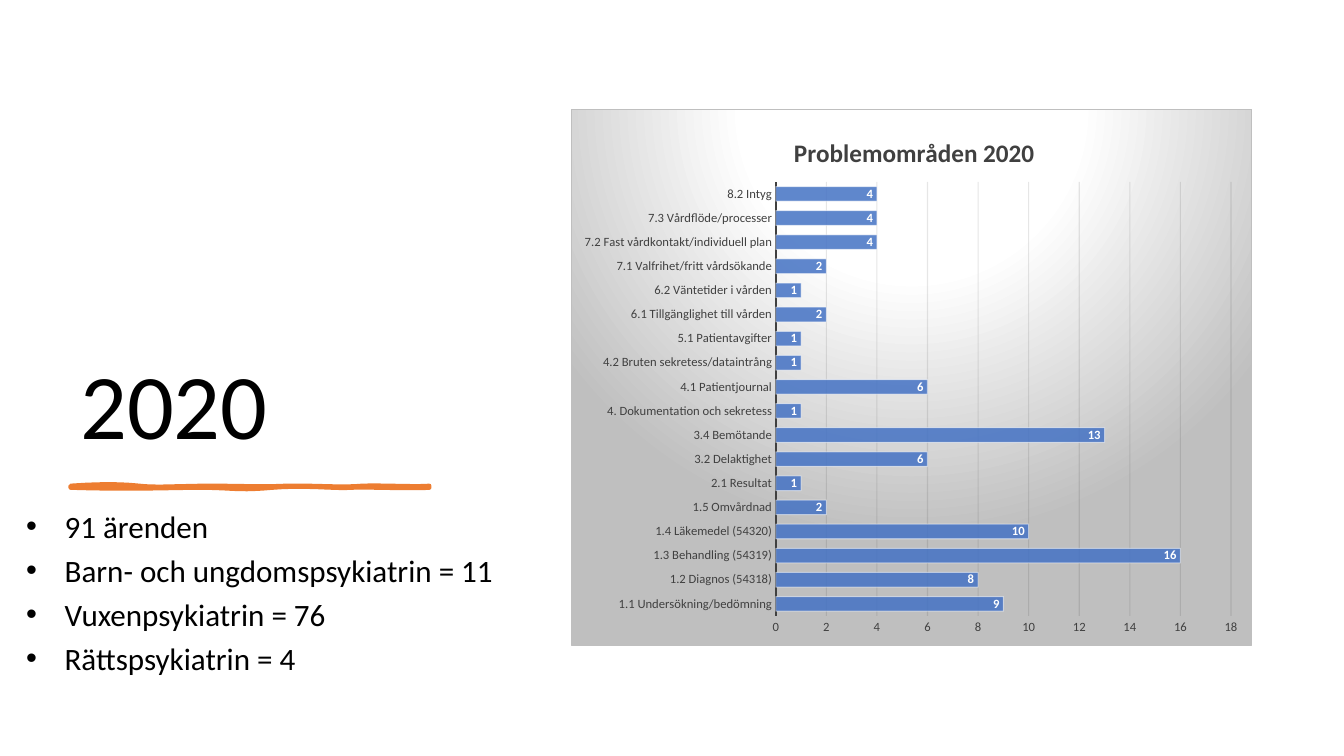
"""Build a slide with the 2020 case counts and a bar chart of problem areas."""
from lxml import etree
from pptx import Presentation
from pptx.chart.data import CategoryChartData
from pptx.dml.color import RGBColor
from pptx.enum.chart import XL_CHART_TYPE, XL_LABEL_POSITION, XL_TICK_MARK
from pptx.enum.text import MSO_ANCHOR
from pptx.oxml import parse_xml
from pptx.oxml.ns import nsdecls, qn
from pptx.util import Cm, Pt

BAR = XL_CHART_TYPE.BAR_CLUSTERED
INSIDE_END = XL_LABEL_POSITION.INSIDE_END
NO_TICK = XL_TICK_MARK.NONE
TOP, BOTTOM = MSO_ANCHOR.TOP, MSO_ANCHOR.BOTTOM

HEADING = "2020"
FACTS = ["91 ärenden", "Barn- och ungdomspsykiatrin = 11",
         "Vuxenpsykiatrin = 76", "Rättspsykiatrin = 4"]
CHART_TITLE = "Problemområden 2020"
PROBLEMS = [
    ("1.1 Undersökning/bedömning", 9),
    ("1.2 Diagnos (54318)", 8),
    ("1.3 Behandling (54319)", 16),
    ("1.4 Läkemedel (54320)", 10),
    ("1.5 Omvårdnad", 2),
    ("2.1 Resultat", 1),
    ("3.2 Delaktighet", 6),
    ("3.4 Bemötande", 13),
    ("4. Dokumentation och sekretess", 1),
    ("4.1 Patientjournal", 6),
    ("4.2 Bruten sekretess/dataintrång", 1),
    ("5.1 Patientavgifter", 1),
    ("6.1 Tillgänglighet till vården", 2),
    ("6.2 Väntetider i vården", 1),
    ("7.1 Valfrihet/fritt vårdsökande", 2),
    ("7.2 Fast vårdkontakt/individuell plan", 4),
    ("7.3 Vårdflöde/processer", 4),
    ("8.2 Intyg", 4),
]
BRUSH_START = (1.78, 12.24)
BRUSH_CURVES = [
    ((2.46, 12.19), (3.07, 12.19), (3.51, 12.24)),
    ((3.94, 12.29), (4.5, 12.24), (5.31, 12.24)),
    ((6.12, 12.24), (6.6, 12.27), (7.21, 12.24)),
    ((7.82, 12.22), (8.61, 12.29), (9.12, 12.24)),
    ((9.63, 12.22), (10.46, 12.27), (10.82, 12.24)),
    ((10.82, 12.27), (10.82, 12.29), (10.82, 12.29)),
    ((10.36, 12.32), (9.25, 12.27), (8.84, 12.29)),
    ((8.43, 12.32), (7.72, 12.22), (6.86, 12.29)),
    ((5.97, 12.37), (5.87, 12.29), (5.05, 12.29)),
    ((4.22, 12.29), (3.35, 12.34), (1.78, 12.29)),
]
THEME = {
    "font": "Calibri", "text": "000000", "muted": "404040", "accent": "ED7D31",
    "bar": "4472C4", "light": "FFFFFF", "grey": "BFBFBF", "grid": "0D0D0D",
    "heading": 66, "body": 22.2, "title": 18, "label": 9, "base": 10,
}


def rgb(name):
    return RGBColor.from_string(THEME[name])


def style(font, size, color, bold=False):
    font.name, font.size, font.bold = THEME["font"], Pt(THEME[size]), bold
    font.color.rgb = rgb(color)


def add_text(s, box, lines, size, anchor=TOP, spacing=0.9, before=0, indent=0):
    tf = s.shapes.add_textbox(*map(Cm, box)).text_frame
    tf.word_wrap, tf.vertical_anchor = True, anchor
    for i, line in enumerate(lines):
        p = tf.paragraphs[0] if i == 0 else tf.add_paragraph()
        p.line_spacing, p.space_before = spacing, Pt(before)
        r = p.add_run()
        r.text = line
        style(r.font, size, "text")
        if indent:
            pPr = p._p.get_or_add_pPr()
            pPr.set("marL", str(Cm(indent)))
            pPr.set("indent", str(-Cm(indent)))
            etree.SubElement(pPr, qn("a:buFont")).set("typeface", "Arial")
            etree.SubElement(pPr, qn("a:buChar")).set("char", "•")


def curve_points(start, curves, steps=10):
    points = []
    for c1, c2, end in curves:
        for t in (i / steps for i in range(1, steps + 1)):
            u = 1 - t
            points.append(tuple(
                Cm(u**3 * a + 3 * u * u * t * b + 3 * u * t * t * c + t**3 * d)
                for a, b, c, d in zip(start, c1, c2, end)))
        start = end
    return points


def add_brush(s):
    builder = s.shapes.build_freeform(*map(Cm, BRUSH_START))
    builder.add_line_segments(curve_points(BRUSH_START, BRUSH_CURVES), close=True)
    sp = builder.convert_to_shape()
    sp.shadow.inherit = False
    sp.fill.solid()
    sp.fill.fore_color.rgb = rgb("accent")
    sp.line.color.rgb = rgb("accent")
    sp.line.width = Pt(3)


def set_line(line, color, width, alpha=100):
    line.color.rgb, line.width = rgb(color), Pt(width)
    set_alpha(line.fill, alpha)


def set_alpha(fill, percent):
    clr = fill._xPr.find(qn("a:solidFill"))[0]
    etree.SubElement(clr, qn("a:alpha")).set("val", str(percent * 1000))


def set_layout(parent, after, inner=False, **place):
    target = '<c:layoutTarget val="inner"/>' if inner else ""
    modes = "".join(f'<c:{k}Mode val="edge"/>' for k in "xy")
    values = "".join(f'<c:{k} val="{v}"/>' for k, v in place.items())
    for old in parent.findall(qn("c:layout")):
        parent.remove(old)
    layout = parse_xml(f'<c:layout {nsdecls("c")}><c:manualLayout>{target}{modes}'
                       f'{values}</c:manualLayout></c:layout>')
    if after is None:
        parent.insert(0, layout)
    else:
        after.addnext(layout)


def set_background(chart):
    stops = "".join(f'<a:gs pos="{pos * 1000}"><a:srgbClr val="{THEME[c]}"/></a:gs>'
                    for pos, c in ((0, "light"), (39, "light"), (100, "grey")))
    spPr = parse_xml(
        f'<c:spPr {nsdecls("c", "a")}><a:gradFill><a:gsLst>{stops}</a:gsLst>'
        '<a:path path="circle"><a:fillToRect l="50000" t="-80000" r="50000" '
        'b="180000"/></a:path></a:gradFill><a:ln w="9525"><a:solidFill>'
        f'<a:srgbClr val="{THEME["grey"]}"/></a:solidFill></a:ln></c:spPr>')
    chart._chartSpace.find(qn("c:chart")).addnext(spPr)


def add_problem_chart(s):
    data = CategoryChartData()
    data.categories = [name for name, _ in PROBLEMS]
    data.add_series("Series 1", [count for _, count in PROBLEMS])
    box = map(Cm, (14.4, 2.75, 17.15, 13.53))
    chart = s.shapes.add_chart(BAR, *box, data).chart
    style(chart.font, "base", "text")
    chart.has_legend = False
    set_background(chart)

    chart.has_title = True
    tf = chart.chart_title.text_frame
    tf.text = CHART_TITLE
    style(tf.paragraphs[0].runs[0].font, "title", "muted", bold=True)
    title = chart.chart_title._element
    set_layout(title, title.find(qn("c:tx")), x=0.32, y=0.04)
    set_layout(chart._chartSpace.chart.plotArea, None, inner=True,
               x=0.3, y=0.135, w=0.67, h=0.81)

    for axis in (chart.category_axis, chart.value_axis):
        axis.major_tick_mark = axis.minor_tick_mark = NO_TICK
        style(axis.tick_labels.font, "label", "muted")
    set_line(chart.category_axis.format.line, "muted", 1.5)
    value_axis = chart.value_axis
    value_axis.format.line.fill.background()
    value_axis.minimum_scale, value_axis.maximum_scale = 0, 18
    value_axis.major_unit = 2
    set_line(value_axis.major_gridlines.format.line, "grid", 0.75, alpha=10)

    plot = chart.plots[0]
    plot.gap_width, plot.vary_by_categories = 65, False
    series = plot.series[0]
    series.format.fill.solid()
    series.format.fill.fore_color.rgb = rgb("bar")
    set_alpha(series.format.fill, 85)
    set_line(series.format.line, "light", 0.75, alpha=50)
    labels = series.data_labels
    labels.show_value, labels.position = True, INSIDE_END
    style(labels.font, "label", "light", bold=True)


def main():
    prs = Presentation()
    prs.slide_width, prs.slide_height = Cm(33.87), Cm(19.05)
    s = prs.slides.add_slide(prs.slide_layouts[6])
    add_text(s, (1.78, 1.78, 9.93, 9.93), [HEADING], "heading", anchor=BOTTOM)
    add_text(s, (0.41, 12.85, 13.67, 4.34), FACTS, "body",
             spacing=0.8, before=10, indent=0.97)
    add_brush(s)
    add_problem_chart(s)
    prs.save("out.pptx")


if __name__ == "__main__":
    main()
